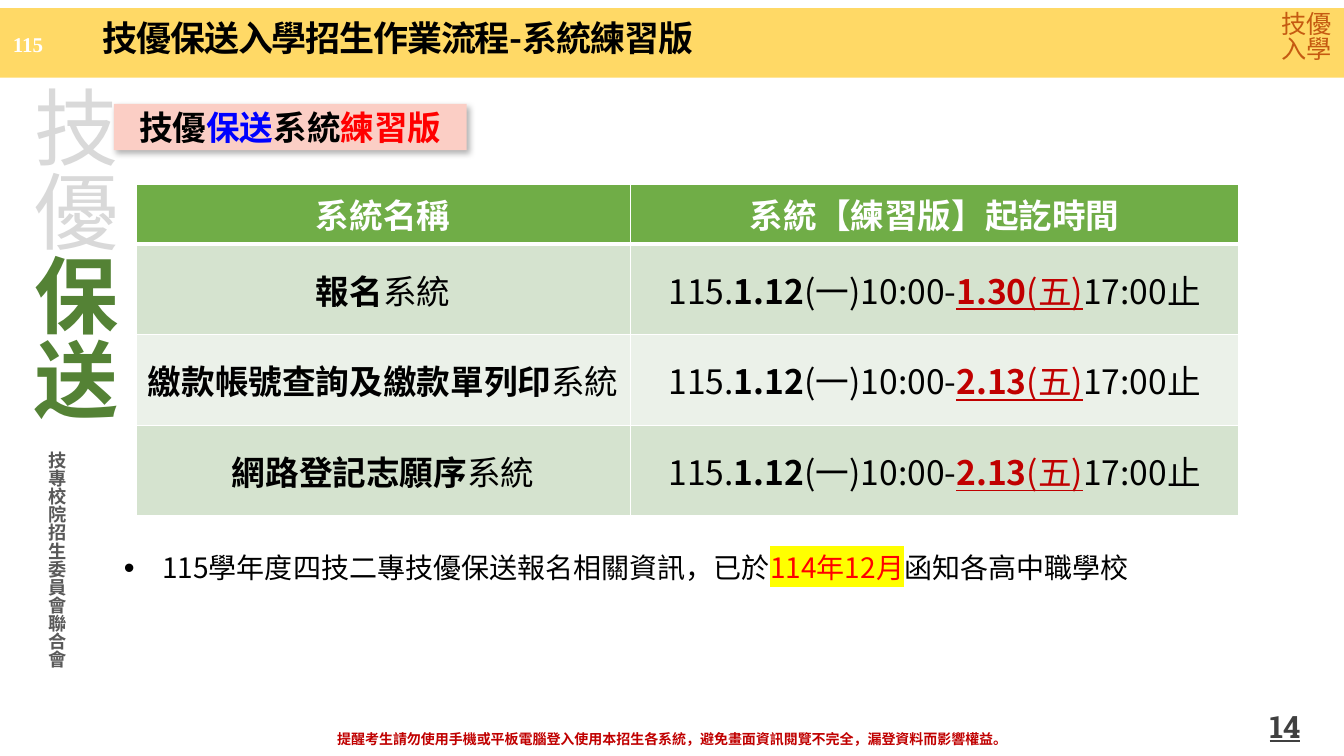
from lxml import etree
from pptx import Presentation
from pptx.dml.color import RGBColor
from pptx.enum.shapes import MSO_SHAPE
from pptx.enum.text import MSO_ANCHOR, PP_ALIGN
from pptx.oxml.ns import qn
from pptx.util import Inches, Pt

LEFT, CENTER, RIGHT, JUSTIFY = PP_ALIGN.LEFT, PP_ALIGN.CENTER, PP_ALIGN.RIGHT, PP_ALIGN.JUSTIFY
TOP, MIDDLE = MSO_ANCHOR.TOP, MSO_ANCHOR.MIDDLE
RECTANGLE = MSO_SHAPE.RECTANGLE
SANS = "Noto Sans CJK SC"
BLACK, WHITE, RED, DARK_RED = "000000", "FFFFFF", "FF0000", "C00000"
TIGHT = 0.83
WIDTH, HEIGHT = 13.33, 7.5


def rgb(value):
    return RGBColor.from_string(value)


def color_element(tag, value, **attributes):
    """Element of the given tag that holds one colour."""
    element = etree.Element(qn(tag), attributes)
    etree.SubElement(element, qn("a:srgbClr"), val=value)
    return element


def line_element(tag, value, points):
    line = etree.Element(qn(tag), w=str(Pt(points)))
    line.append(color_element("a:solidFill", value))
    return line


def add_run(paragraph, text, size=24, font=SANS, color=BLACK, bold=False,
            underline=False, outline=None, highlight=None, spacing=None):
    run = paragraph.add_run()
    run.text = text
    run.font.size, run.font.name, run.font.bold = Pt(size), font, bold
    run.font.color.rgb = rgb(color)
    if underline:
        run.font.underline = True
    properties = run.font._element
    latin = properties.find(qn("a:latin"))
    latin.addnext(etree.Element(qn("a:ea"), typeface=font))
    if highlight:
        latin.addprevious(color_element("a:highlight", highlight))
    if outline:
        properties.insert(0, line_element("a:ln", outline, 1))
    if spacing:
        properties.set("spc", str(round(spacing * 100)))


def write(frame, *paragraphs, align=LEFT, line_spacing=None, **style):
    """Fill a frame; a paragraph is a string or a list of (text, changes) pairs."""
    for index, content in enumerate(paragraphs):
        paragraph = frame.paragraphs[0] if index == 0 else frame.add_paragraph()
        paragraph.alignment = align
        if line_spacing:
            paragraph.line_spacing = line_spacing
        runs = [(content, {})] if isinstance(content, str) else content
        for text, changes in runs:
            add_run(paragraph, text, **{**style, **changes})


def add_text(slide, box, *paragraphs, anchor=TOP, wrap=True, vertical=False, **style):
    frame = slide.shapes.add_textbox(*map(Inches, box)).text_frame
    frame.word_wrap, frame.vertical_anchor = wrap, anchor
    if vertical:
        frame._txBody.bodyPr.set("vert", "eaVert")
    write(frame, *paragraphs, **style)
    return frame


def add_rectangle(slide, box, fill):
    shape = slide.shapes.add_shape(RECTANGLE, *map(Inches, box))
    shape.shadow.inherit = False
    shape.fill.solid()
    shape.fill.fore_color.rgb = rgb(fill)
    shape.line.fill.background()
    return shape


def add_header(slide, box):
    left, top, width, height = box
    add_rectangle(slide, box, "FFD966")
    add_text(slide, (left + 0.03, top + 0.18, 1.16, 0.35), "115", size=15,
             font="Times New Roman", color=WHITE, bold=True)
    add_text(slide, (left + 0.92, top, 9, 0.64), "技優保送入學招生作業流程-系統練習版",
             anchor=MIDDLE, size=25, bold=True, spacing=-0.8, line_spacing=0.9)
    add_text(slide, (left + width - 0.73, top, 0.71, 0.71), "技優", "入學", wrap=False,
             align=CENTER, size=18, color="C55A11", line_spacing=TIGHT)


def add_sidebar(slide, box):
    left, top, width, height = box
    add_text(slide, (left, top, width, height * 0.61),
             [("技優", {}), ("保送", {"color": "548235", "bold": True, "outline": WHITE})],
             vertical=True, size=60, color="D9D9D9", line_spacing=TIGHT)
    add_text(slide, (left + 0.37, top + 3.63, 0.42, 2.56), "技專校院招生委員會聯合會",
             vertical=True, align=CENTER, size=13, font="Noto Sans CJK JP",
             color="595959", bold=True, line_spacing=TIGHT)


def add_section_label(slide, box):
    label = add_rectangle(slide, box, "FBCEC5")
    effects = label._element.spPr.find(qn("a:effectLst"))
    shadow = color_element("a:outerShdw", BLACK, blurRad=str(Pt(4.5)), dist=str(Pt(2.6)),
                           dir=str(53 * 60000), algn="tl", rotWithShape="0")
    etree.SubElement(shadow[0], qn("a:alpha"), val="30000")
    effects.append(shadow)
    label.text_frame.vertical_anchor = MIDDLE
    write(label.text_frame,
          [("技優", {}), ("保送", {"color": "0000FF"}), ("系統", {}), ("練習版", {"color": RED})],
          align=CENTER, bold=True)


def fill_cell(cell, content, fill, bottom=1, **style):
    cell.vertical_anchor = MIDDLE
    cell.fill.solid()
    cell.fill.fore_color.rgb = rgb(fill)
    properties = cell._tc.get_or_add_tcPr()
    for index, (side, points) in enumerate(zip("LRTB", (1, 1, 1, bottom))):
        properties.insert(index, line_element(f"a:ln{side}", WHITE, points))
    write(cell.text_frame, content, align=CENTER, **style)


def add_schedule(slide, box):
    left, top, width, height = box
    systems = [("報名", "1.30"), ("繳款帳號查詢及繳款單列印", "2.13"), ("網路登記志願序", "2.13")]
    table = slide.shapes.add_table(len(systems) + 1, 2, *map(Inches, box)).table
    for column, share in zip(table.columns, (0.448, 0.552)):
        column.width = Inches(width * share)
    header_height = height * 0.18
    for index, row in enumerate(table.rows):
        row.height = Inches((height - header_height) / len(systems) if index else header_height)
    for column, title in enumerate(("系統名稱", "系統【練習版】起訖時間")):
        fill_cell(table.cell(0, column), title, "70AD47", bottom=3, color=WHITE, bold=True)
    strong = {"bold": True}
    deadline = {"color": DARK_RED, "underline": True}
    for row, (name, end) in enumerate(systems, 1):
        fill = "D5E3CF" if row % 2 else "EBF1E9"
        fill_cell(table.cell(row, 0), [(name, strong), ("系統", {})], fill)
        fill_cell(table.cell(row, 1),
                  [("115.", {}), ("1.12", strong), ("(一)10:00-", {}),
                   (end, {**deadline, **strong}), ("(五)", deadline), ("17:00止", {})], fill)


def add_notice(slide, box):
    frame = add_text(slide, box,
                     [("115學年度四技二專技優保送報名相關資訊，已於", {}),
                      ("114年12月", {"color": RED, "highlight": "FFFF00"}),
                      ("函知各高中職學校", {})],
                     align=JUSTIFY, size=20, line_spacing=TIGHT)
    properties = frame.paragraphs[0]._p.get_or_add_pPr()
    properties.set("marL", str(Inches(0.38)))
    properties.set("indent", str(-Inches(0.38)))
    properties.append(color_element("a:buClr", BLACK))
    for tag, attributes in (("a:buSzPct", {"val": "110000"}),
                            ("a:buFont", {"typeface": "Arial"}),
                            ("a:buChar", {"char": "•"})):
        etree.SubElement(properties, qn(tag), attributes)


def add_footer(slide, box):
    left, top, width, height = box
    add_text(slide, (left + width * 0.75, top, 3, 0.4), "14", anchor=MIDDLE, align=RIGHT,
             size=22, font="Roboto Slab", color="404040", bold=True, underline=True)
    add_text(slide, (left + width * 0.24, top + 0.23, width * 0.52, 0.27),
             "提醒考生請勿使用手機或平板電腦登入使用本招生各系統，避免畫面資訊閱覽不完全，漏登資料而影響權益。",
             wrap=False, align=CENTER, size=10, color=DARK_RED, bold=True, line_spacing=TIGHT)


def main():
    presentation = Presentation()
    presentation.slide_width, presentation.slide_height = Inches(WIDTH), Inches(HEIGHT)
    slide = presentation.slides.add_slide(presentation.slide_layouts[6])
    add_header(slide, (0, 0.08, WIDTH, 0.69))
    add_sidebar(slide, (-0.1, 0.75, 1.21, 6.19))
    add_footer(slide, (0, 7, WIDTH, 0.5))
    add_notice(slide, (1.13, 5.47, 10.28, 0.56))
    add_schedule(slide, (1.35, 1.83, 10.94, 3.29))
    add_section_label(slide, (1.13, 1.03, 3.5, 0.46))
    presentation.save("out.pptx")


if __name__ == "__main__":
    main()
